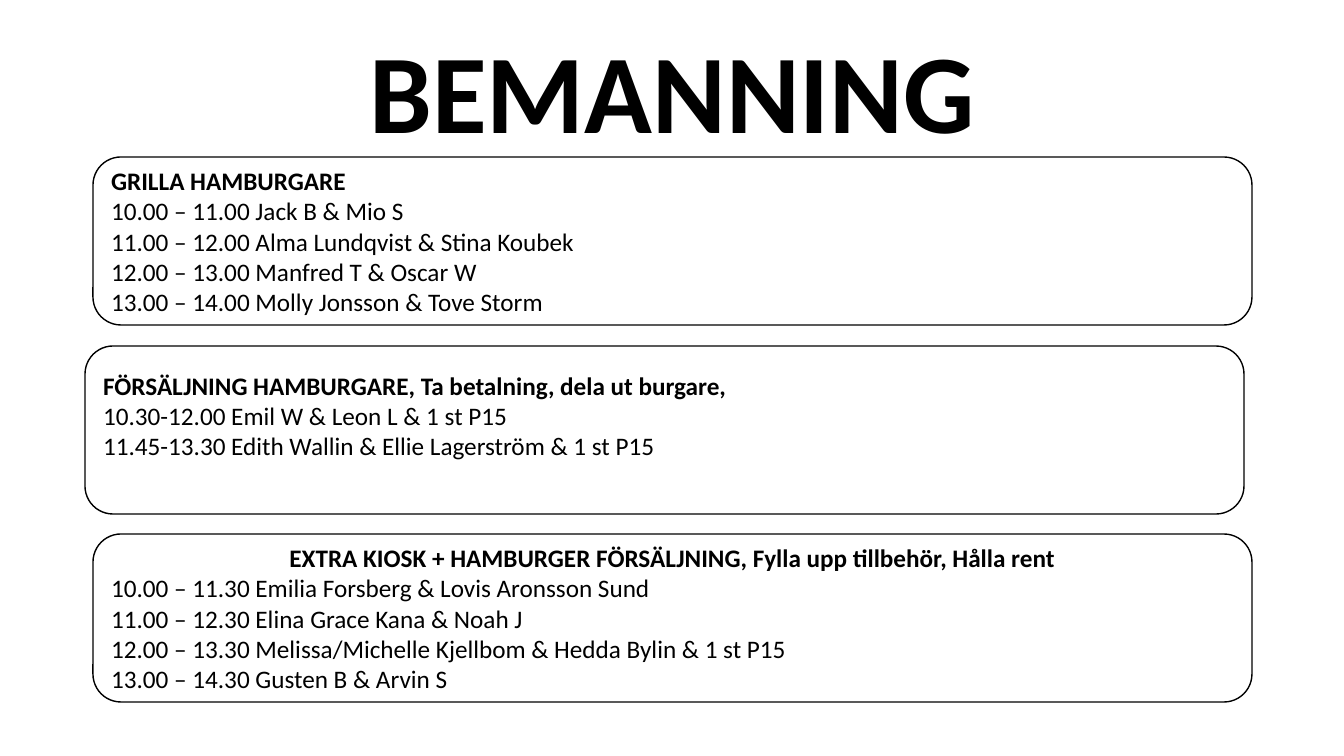
from pptx import Presentation
from pptx.dml.color import RGBColor
from pptx.enum.shapes import MSO_SHAPE
from pptx.enum.text import MSO_ANCHOR, MSO_AUTO_SIZE, PP_ALIGN
from pptx.util import Pt

PX = 914400 / 100.8
ROUNDED = MSO_SHAPE.ROUNDED_RECTANGLE
TOP, MIDDLE = MSO_ANCHOR.TOP, MSO_ANCHOR.MIDDLE
LEFT, CENTER = PP_ALIGN.LEFT, PP_ALIGN.CENTER
FIXED = MSO_AUTO_SIZE.NONE
TITLE_ONLY = 5
WIDTH, PANEL_HEIGHT = 1159, 168


def px(length):
    """Turn pixels into EMU."""
    return round(length * PX)


def color(value):
    """Turn a hex string into a colour."""
    return RGBColor.from_string(value)


def assign(target, values):
    """Set each attribute in a dict on the target."""
    for name, value in values.items():
        setattr(target, name, value)


class StaffingSlide:
    """Hold the style and the current slide."""

    font = "Calibri"
    ink = "000000"
    paper = "FFFFFF"

    def __init__(self, deck):
        """Add a title-only slide to the deck."""
        self.slide = deck.slides.add_slide(deck.slide_layouts[TITLE_ONLY])

    def text_line(self, paragraph, text, size, bold, align):
        """Fill and format one paragraph."""
        paragraph.text = text
        paragraph.alignment = align
        assign(paragraph.font, {"name": self.font, "size": Pt(size), "bold": bold})
        paragraph.font.color.rgb = color(self.ink)

    def title(self, text, left, top, width, height):
        """Place and format the title placeholder."""
        heading = self.slide.shapes.title
        assign(heading, {"left": px(left), "top": px(top),
                         "width": px(width), "height": px(height)})
        frame = heading.text_frame
        assign(frame, {"auto_size": FIXED, "word_wrap": True, "vertical_anchor": TOP})
        self.text_line(frame.paragraphs[0], text, 80, True, CENTER)
        frame.paragraphs[0].line_spacing = 0.9

    def panel(self, left, top, heading, shifts, align=LEFT, bottom=5):
        """Draw a rounded panel with a bold heading above its shifts."""
        panel = self.slide.shapes.add_shape(
            ROUNDED, px(left), px(top), px(WIDTH), px(PANEL_HEIGHT))
        panel.shadow.inherit = False
        panel.fill.solid()
        panel.fill.fore_color.rgb = color(self.paper)
        panel.line.color.rgb = color(self.ink)
        panel.line.width = Pt(1)
        frame = panel.text_frame
        assign(frame, {"word_wrap": True, "vertical_anchor": MIDDLE,
                       "margin_bottom": px(bottom)})
        self.text_line(frame.paragraphs[0], heading, 18, True, align)
        for shift in shifts:
            self.text_line(frame.add_paragraph(), shift, 18, False, LEFT)


def main():
    """Build the staffing slide."""
    deck = Presentation()
    assign(deck, {"slide_width": px(1344), "slide_height": px(756)})
    staffing = StaffingSlide(deck)
    staffing.title("BEMANNING", 93, 32, WIDTH, 146)
    staffing.panel(93, 157, "GRILLA HAMBURGARE", [
        "10.00 – 11.00 Jack B & Mio S",
        "11.00 – 12.00 Alma Lundqvist & Stina Koubek",
        "12.00 – 13.00 Manfred T & Oscar W",
        "13.00 – 14.00 Molly Jonsson & Tove Storm",
    ])
    staffing.panel(85, 346, "FÖRSÄLJNING HAMBURGARE, Ta betalning, dela ut burgare,", [
        "10.30-12.00 Emil W & Leon L & 1 st P15",
        "11.45-13.30 Edith Wallin & Ellie Lagerström & 1 st P15",
    ], bottom=34)
    staffing.panel(
        93, 534,
        "EXTRA KIOSK + HAMBURGER FÖRSÄLJNING, Fylla upp tillbehör, Hålla rent", [
            "10.00 – 11.30 Emilia Forsberg & Lovis Aronsson Sund",
            "11.00 – 12.30 Elina Grace Kana & Noah J",
            "12.00 – 13.30 Melissa/Michelle Kjellbom & Hedda Bylin & 1 st P15",
            "13.00 – 14.30 Gusten B & Arvin S",
        ], align=CENTER)
    deck.save("out.pptx")


if __name__ == "__main__":
    main()
